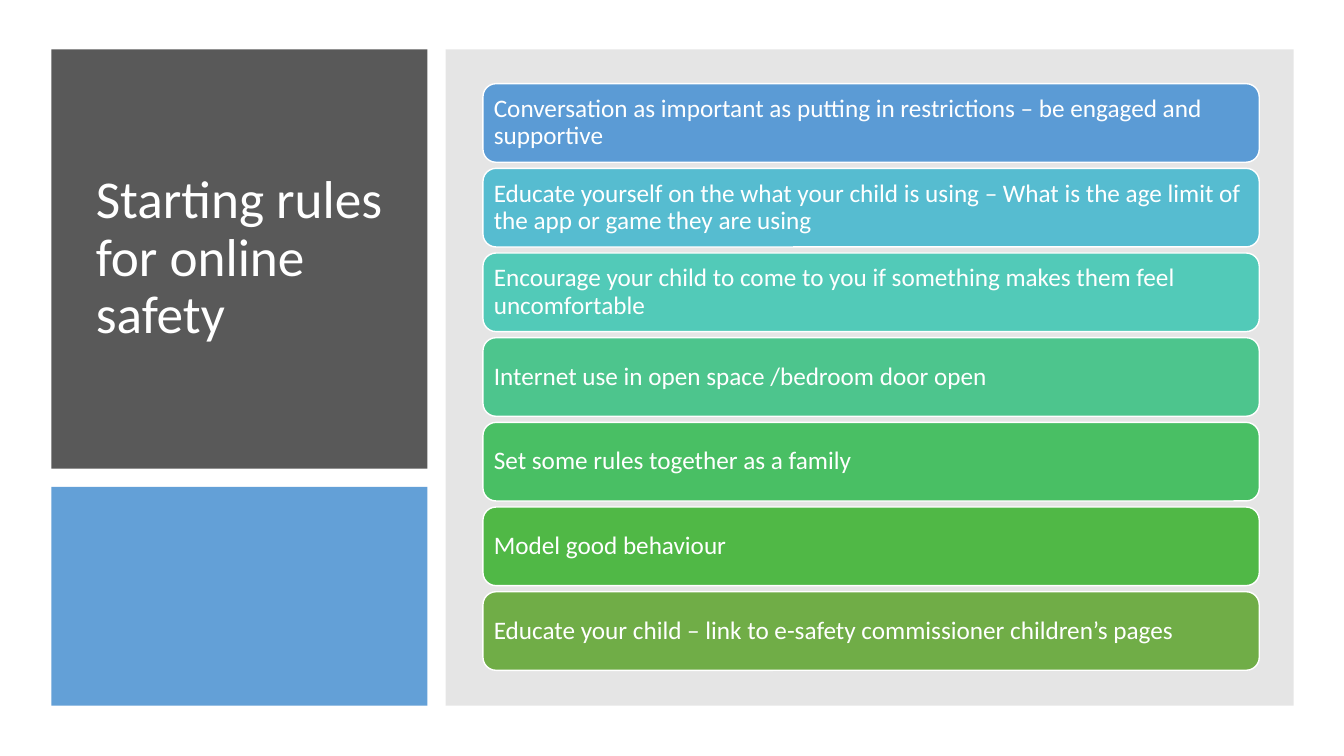
from dataclasses import dataclass

from lxml.etree import SubElement
from pptx import Presentation
from pptx.dml.color import RGBColor as RGB
from pptx.enum.shapes import MSO_SHAPE as Shape
from pptx.enum.text import MSO_ANCHOR as Anchor, MSO_AUTO_SIZE as Fit, PP_ALIGN as Align
from pptx.oxml.ns import qn
from pptx.util import Inches, Pt


@dataclass(frozen=True)
class Theme:
    font: str = "Calibri"
    white: str = "FFFFFF"
    dark: str = "595959"
    blue: str = "5B9BD5"
    gray: str = "808080"
    head: int = 38
    body: int = 18


theme = Theme()

RULES = [
    ("Conversation as important as putting in restrictions – be engaged and supportive", theme.blue),
    ("Educate yourself on the what your child is using – What is the age limit of "
     "the app or game they are using", "56BCD0"),
    ("Encourage your child to come to you if something makes them feel uncomfortable", "52CAB8"),
    ("Internet use in open space /bedroom door open", "4DC58D"),
    ("Set some rules together as a family", "49BF64"),
    ("Model good behaviour", "50B846"),
    ("Educate your child – link to e-safety commissioner children’s pages", "70AD47"),
]


def add_box(shapes, kind, box, color, alpha=100):
    """Add a filled shape without outline or shadow; alpha is opacity in percent."""
    shape = shapes.add_shape(kind, *map(Inches, box))
    shape.shadow.inherit = False
    shape.fill.solid()
    shape.fill.fore_color.rgb = RGB.from_string(color)
    if alpha < 100:
        tint = next(shape.element.iter(qn("a:srgbClr")))
        SubElement(tint, qn("a:alpha"), val=str(alpha * 1000))
    shape.line.fill.background()
    return shape


def set_text(frame, text, size):
    frame.text = text
    frame.word_wrap = True
    frame.auto_size = Fit.NONE
    frame.vertical_anchor = Anchor.MIDDLE
    para = frame.paragraphs[0]
    para.alignment = Align.LEFT
    para.line_spacing = 0.9
    para.font.name = theme.font
    para.font.size = Pt(size)
    para.font.color.rgb = RGB.from_string(theme.white)


prs = Presentation()
prs.slide_width, prs.slide_height = Inches(13.33), Inches(7.5)
slide = prs.slides.add_slide(prs.slide_layouts[5])

# Panels, with the title in front of the dark one
panel = add_box(slide.shapes, Shape.RECTANGLE, (0.51, 0.49, 3.73, 4.16), theme.dark)
title = slide.shapes.title
panel.element.addnext(title.element)
title.left, title.top = Inches(0.85), Inches(0.8)
title.width, title.height = Inches(3.11), Inches(3.54)
set_text(title.text_frame, "Starting rules for online safety", theme.head)
add_box(slide.shapes, Shape.RECTANGLE, (0.51, 4.83, 3.73, 2.17), theme.blue, 95)
add_box(slide.shapes, Shape.RECTANGLE, (4.42, 0.49, 8.41, 6.51), theme.gray, 20)

# Stack of rules
stack = slide.shapes.add_group_shape()
for i, (text, color) in enumerate(RULES):
    bar = add_box(stack.shapes, Shape.ROUNDED_RECTANGLE, (4.79, 0.83 + 0.84 * i, 7.7, 0.78), color)
    bar.line.color.rgb = RGB.from_string(theme.white)
    bar.line.width = Pt(1)
    frame = bar.text_frame
    frame.margin_left = frame.margin_right = Inches(0.07)
    frame.margin_top = frame.margin_bottom = Inches(0.07)
    set_text(frame, text, theme.body)

prs.save("out.pptx")
